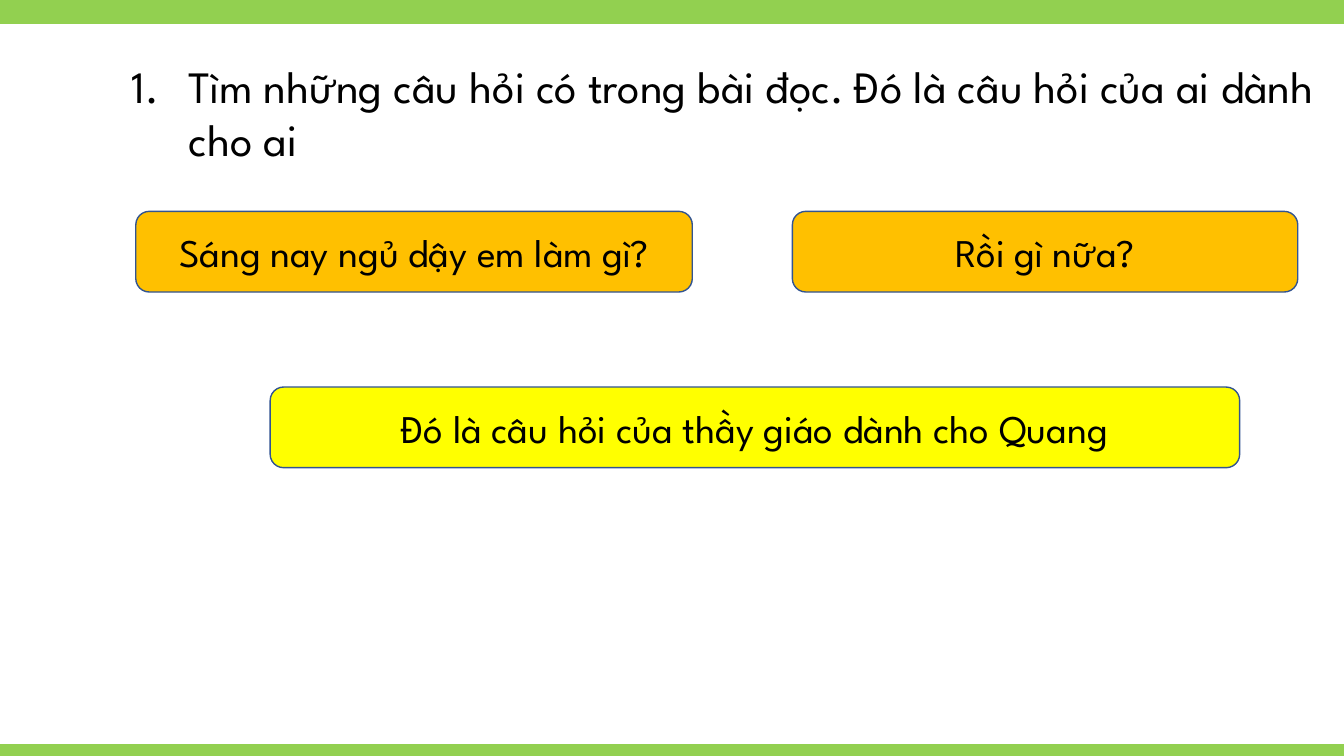
from lxml.etree import SubElement
from pptx import Presentation
from pptx.dml.color import RGBColor
from pptx.enum.shapes import MSO_SHAPE
from pptx.enum.text import MSO_ANCHOR, MSO_AUTO_SIZE, PP_ALIGN
from pptx.oxml.ns import qn
from pptx.util import Pt

WIDTH, HEIGHT = 960, 540


def color(value):
    return RGBColor.from_string(value)


class Deck:
    font = "League Spartan"
    ink = "000000"
    outline = "325491"
    green = "92D050"

    def __init__(self, prs):
        self.slide = prs.slides.add_slide(prs.slide_layouts[5])

    def text(self, tf, text, size=28, align=PP_ALIGN.CENTER,
             anchor=MSO_ANCHOR.MIDDLE, number_indent=None):
        """Fill a frame with one paragraph, numbered if an indent is given."""
        tf.word_wrap = True
        tf.vertical_anchor = anchor
        p = tf.paragraphs[0]
        p.alignment = align
        if number_indent:
            pPr = p._p.get_or_add_pPr()
            pPr.set("marL", str(Pt(number_indent)))
            pPr.set("indent", str(-Pt(number_indent)))
            SubElement(pPr, qn("a:buFont"), typeface=self.font)
            SubElement(pPr, qn("a:buAutoNum"), type="arabicPeriod")
        r = p.add_run()
        r.text = text
        r.font.name = self.font
        r.font.size = Pt(size)
        r.font.color.rgb = color(self.ink)

    def title(self, text, left, top, width, height):
        sp = self.slide.shapes.title
        sp.left, sp.top, sp.width, sp.height = map(Pt, (left, top, width, height))
        self.text(sp.text_frame, text, size=32, align=PP_ALIGN.LEFT,
                  anchor=MSO_ANCHOR.TOP, number_indent=40.5)
        sp.text_frame.auto_size = MSO_AUTO_SIZE.SHAPE_TO_FIT_TEXT

    def shape(self, kind, left, top, width, height, fill, line):
        sp = self.slide.shapes.add_shape(kind, *map(Pt, (left, top, width, height)))
        sp.shadow.inherit = False
        sp.fill.solid()
        sp.fill.fore_color.rgb = color(fill)
        sp.line.color.rgb = color(line)
        sp.line.width = Pt(1)
        return sp

    def band(self, top, height):
        self.shape(MSO_SHAPE.RECTANGLE, 0, top, WIDTH, height, self.green, self.green)

    def card(self, text, left, top, width, fill):
        sp = self.shape(MSO_SHAPE.ROUNDED_RECTANGLE, left, top, width, 57.6,
                        fill, self.outline)
        self.text(sp.text_frame, text)


def main():
    prs = Presentation()
    prs.slide_width, prs.slide_height = Pt(WIDTH), Pt(HEIGHT)
    deck = Deck(prs)
    deck.band(0, 16.5)
    deck.band(HEIGHT - 8, 8)
    deck.title("Tìm những câu hỏi có trong bài đọc. Đó là câu hỏi của ai dành cho ai",
               87, 38, 903.6, 85)
    for text, left, width in (("Sáng nay ngủ dậy em làm gì?", 97, 397.5),
                              ("Rồi gì nữa?", 566, 361)):
        deck.card(text, left, 151, width, "FFC000")
    deck.card("Đó là câu hỏi của thầy giáo dành cho Quang", 193, 276.5, 692.5, "FFFF00")
    prs.save("out.pptx")


if __name__ == "__main__":
    main()
